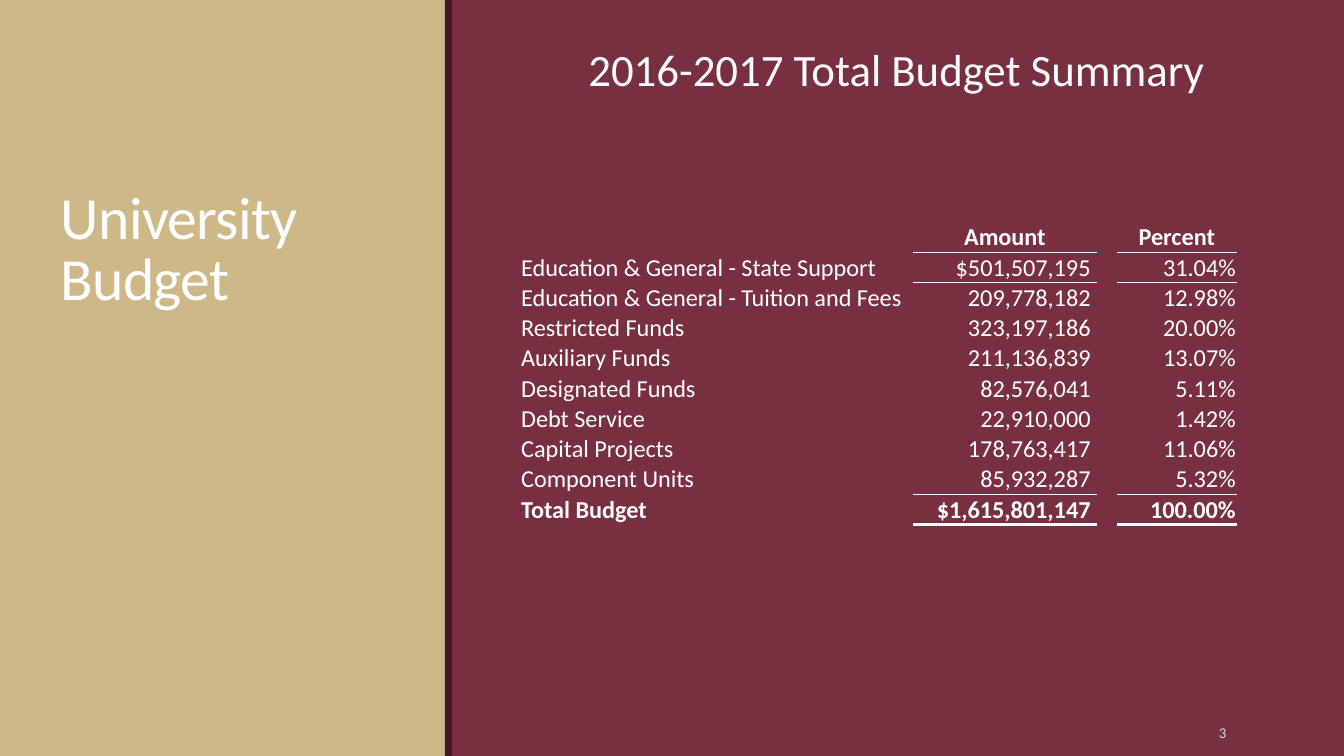
from lxml.etree import SubElement
from pptx import Presentation
from pptx.dml.color import RGBColor
from pptx.enum.shapes import MSO_SHAPE as Shape
from pptx.enum.text import MSO_ANCHOR as Anchor, PP_ALIGN as Align
from pptx.oxml.ns import qn
from pptx.util import Cm, Pt

GARNET = RGBColor(0x78, 0x2F, 0x40)
GOLD = RGBColor(0xCE, 0xB8, 0x88)
DARK_GARNET = RGBColor(0x42, 0x1A, 0x24)
WHITE = RGBColor(0xFF, 0xFF, 0xFF)
LIGHT_GRAY = RGBColor(0xD9, 0xD9, 0xDB)

FONT = "Calibri"
TABLE_SIZE = 13
PLAIN_TABLE_STYLE = "{2D5ABB26-0587-4C30-8999-92F81FD0307C}"
COLUMN_WIDTHS = (7.42, 3.48, 0.38, 2.26)
COLUMN_ALIGNS = (Align.LEFT, Align.RIGHT, Align.LEFT, Align.RIGHT)
VALUE_COLUMNS = (1, 3)
ROW_HEIGHT = 0.57
THIN, THICK = 0.5, 2

BUDGET = [
    ("", "Amount", "", "Percent"),
    ("Education & General - State Support", "$501,507,195 ", "", "31.04%"),
    ("Education & General - Tuition and Fees", "209,778,182 ", "", "12.98%"),
    ("Restricted Funds", "323,197,186 ", "", "20.00%"),
    ("Auxiliary Funds", "211,136,839 ", "", "13.07%"),
    ("Designated Funds", "82,576,041 ", "", "5.11%"),
    ("Debt Service", "22,910,000 ", "", "1.42%"),
    ("Capital Projects", "178,763,417 ", "", "11.06%"),
    ("Component Units", "85,932,287 ", "", "5.32%"),
    ("Total Budget", "$1,615,801,147 ", "", "100.00%"),
]


def add_panel(slide, left, width, height, color):
    shape = slide.shapes.add_shape(Shape.RECTANGLE, Cm(left), 0, Cm(width), height)
    shape.shadow.inherit = False
    shape.fill.solid()
    shape.fill.fore_color.rgb = color
    shape.line.fill.background()


def write_text(paragraph, text, size, color=WHITE, bold=False, align=Align.LEFT):
    paragraph.text = text
    paragraph.alignment = align
    for run in paragraph.runs:
        font = run.font
        font.name, font.size, font.bold = FONT, Pt(size), bold
        font.color.rgb = color


def add_text(slide, box, text, anchor=Anchor.TOP, insets=(0.18, 0.1), **text_format):
    shape = slide.shapes.add_textbox(*map(Cm, box))
    frame = shape.text_frame
    frame.word_wrap = True
    frame.vertical_anchor = anchor
    frame.margin_left = frame.margin_right = Cm(insets[0])
    frame.margin_top = frame.margin_bottom = Cm(insets[1])
    write_text(frame.paragraphs[0], text, **text_format)
    return frame.paragraphs[0]


def add_title(slide, box, text):
    paragraph = add_text(slide, box, text, anchor=Anchor.BOTTOM, size=32)
    paragraph.line_spacing = 0.85
    for run in paragraph.runs:
        run.font._element.set("spc", "-40")


def add_border(cell, side, width):
    properties = cell._tc.get_or_add_tcPr()
    line = SubElement(properties, qn(f"a:ln{side}"), w=str(Pt(width)))
    fill = SubElement(line, qn("a:solidFill"))
    SubElement(fill, qn("a:srgbClr"), val=str(WHITE))


def fill_cell(cell, text, **text_format):
    cell.vertical_anchor = Anchor.BOTTOM
    cell.margin_left = cell.margin_right = cell.margin_top = Cm(0.02)
    cell.margin_bottom = 0
    paragraph = cell.text_frame.paragraphs[0]
    if text:
        write_text(paragraph, text, TABLE_SIZE, **text_format)
    else:
        SubElement(paragraph._p, qn("a:endParaRPr"), sz=str(TABLE_SIZE * 100))


def add_budget_table(slide, left, top):
    last = len(BUDGET) - 1
    frame = slide.shapes.add_table(
        len(BUDGET), len(COLUMN_WIDTHS), Cm(left), Cm(top),
        Cm(sum(COLUMN_WIDTHS)), Cm(ROW_HEIGHT * len(BUDGET)))
    table = frame.table
    table.first_row = table.horz_banding = False
    table._tbl.tblPr.find(qn("a:tableStyleId")).text = PLAIN_TABLE_STYLE
    for column, width in zip(table.columns, COLUMN_WIDTHS):
        column.width = Cm(width)

    top_borders = {1: THIN, last: THIN}
    bottom_borders = {0: THIN, last - 1: THIN, last: THICK}
    for row, texts in enumerate(BUDGET):
        table.rows[row].height = Cm(ROW_HEIGHT)
        for column, text in enumerate(texts):
            cell = table.cell(row, column)
            align = COLUMN_ALIGNS[column] if row else Align.CENTER
            fill_cell(cell, text, bold=row in (0, last), align=align)
            if column in VALUE_COLUMNS:
                for side, borders in (("T", top_borders), ("B", bottom_borders)):
                    if row in borders:
                        add_border(cell, side, borders[row])
            cell.fill.background()


def main():
    presentation = Presentation()
    presentation.slide_width = Cm(25.4)
    presentation.slide_height = Cm(14.29)
    slide = presentation.slides.add_slide(presentation.slide_layouts[6])
    slide.background.fill.solid()
    slide.background.fill.fore_color.rgb = GARNET

    height = presentation.slide_height
    add_panel(slide, 0, 8.43, height, GOLD)
    add_panel(slide, 8.41, 0.13, height, DARK_GARNET)
    add_title(slide, (0.97, 1.24, 6.96, 4.78), "University \vBudget")
    add_text(slide, (8.94, 0.66, 16, 1.27), "2016-2017 Total Budget Summary",
             insets=(0.25, 0.13), size=24, align=Align.CENTER)
    add_text(slide, (20.62, 13.46, 2.74, 0.76), "3", anchor=Anchor.MIDDLE,
             size=8, color=LIGHT_GRAY, align=Align.RIGHT)
    add_budget_table(slide, 9.83, 4.19)
    presentation.save("out.pptx")


if __name__ == "__main__":
    main()
